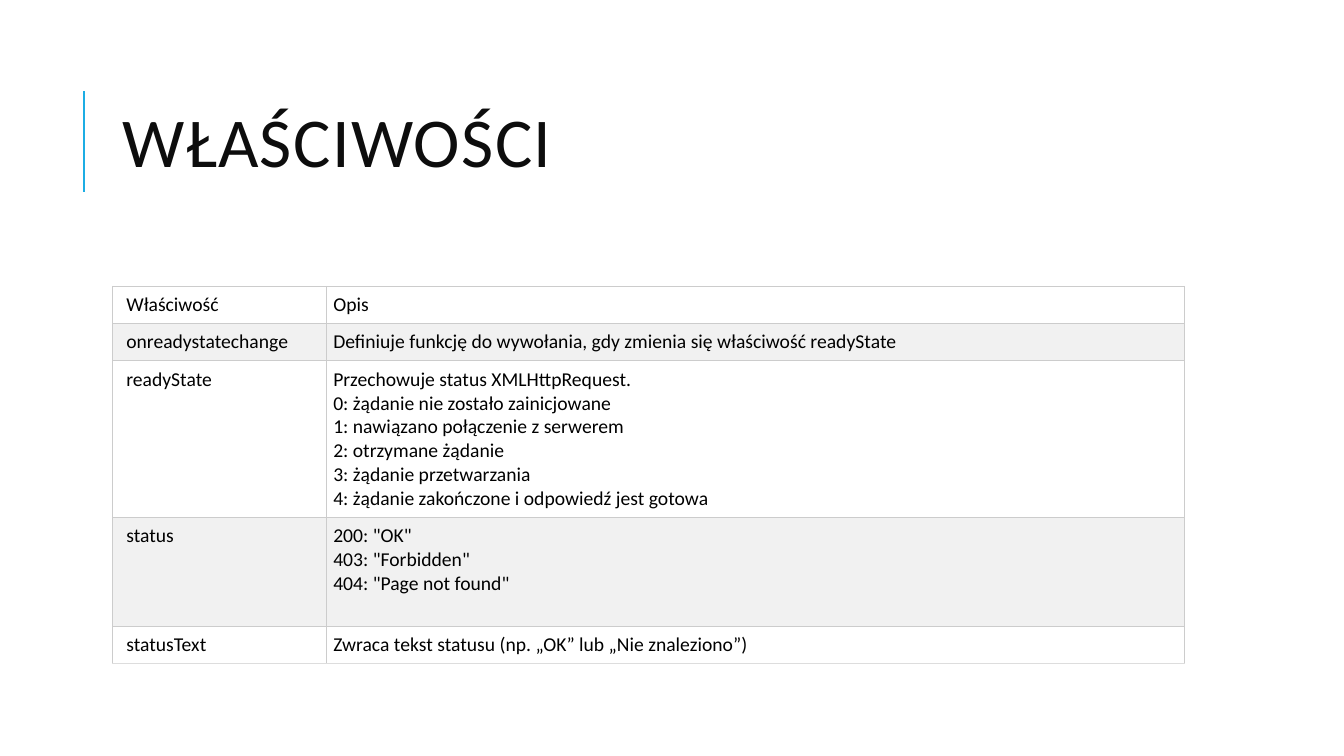
from lxml.etree import SubElement
from pptx import Presentation
from pptx.dml.color import RGBColor
from pptx.enum.shapes import MSO_CONNECTOR as Conn
from pptx.enum.text import MSO_ANCHOR as Anchor, MSO_AUTO_SIZE as Fit, PP_ALIGN as Align
from pptx.oxml.ns import qn
from pptx.util import Pt

BLACK = RGBColor(0x00, 0x00, 0x00)
INK = RGBColor(0x0D, 0x0D, 0x0D)
BLUE = RGBColor(0x1C, 0xAD, 0xE4)
WHITE = RGBColor(0xFF, 0xFF, 0xFF)
BAND = RGBColor(0xF1, 0xF1, 0xF1)
GRID = RGBColor(0xCC, 0xCC, 0xCC)
EDGE = RGBColor(0xDD, 0xDD, 0xDD)

LEFT = 80.64
COLS = [152.64, 612.72]
# Row height, property name, description paragraphs (\v breaks a line)
ROWS = [
    (26.64, "Właściwość", ["Opis"]),
    (26.64, "onreadystatechange",
     ["Definiuje funkcję do wywołania, gdy zmienia się właściwość readyState"]),
    (111.6, "readyState",
     ["Przechowuje status XMLHttpRequest.",
      "0: żądanie nie zostało zainicjowane",
      "1: nawiązano połączenie z serwerem",
      "2: otrzymane żądanie",
      "3: żądanie przetwarzania",
      "4: żądanie zakończone i odpowiedź jest gotowa"]),
    (77.76, "status", ['200: "OK"\v403: "Forbidden"\v404: "Page not found"']),
    (26.64, "statusText", ["Zwraca tekst statusu (np. „OK” lub „Nie znaleziono”)"]),
]


def write(frame, lines, size=14, color=BLACK, font="Calibri", space=1.0, track=0):
    """Fill a text frame, one paragraph per line; track is letter spacing in points."""
    frame.word_wrap = True
    for i, line in enumerate(lines):
        para = frame.add_paragraph() if i else frame.paragraphs[0]
        para.text = line
        para.alignment = Align.LEFT
        para.line_spacing = space
        for run in para.runs:
            run.font.name = font
            run.font.size = Pt(size)
            run.font.bold = False
            run.font.color.rgb = color
            if track:
                run.font._element.set("spc", str(track * 100))
        for gap in para._p.findall(qn("a:br")):
            SubElement(gap, qn("a:rPr")).set("sz", str(size * 100))


def border(cell, low):
    """Draw all four cell borders, the bottom one in the colour low."""
    props = cell._tc.get_or_add_tcPr()
    sides = [("L", GRID), ("R", GRID), ("T", GRID), ("B", low)]
    for i, (side, color) in enumerate(sides):
        line = SubElement(props, qn("a:ln" + side), w=str(Pt(0.75)))
        fill = SubElement(line, qn("a:solidFill"))
        SubElement(fill, qn("a:srgbClr"), val=str(color))
        props.insert(i, line)


class Page:
    def __init__(self, deck):
        self.slide = deck.slides.add_slide(deck.slide_layouts[5])
        self.shapes = self.slide.shapes

    def rule(self, x, top, end, color, width):
        line = self.shapes.add_connector(Conn.STRAIGHT, Pt(x), Pt(end), Pt(x), Pt(top))
        line.line.color.rgb = color
        line.line.width = Pt(width)
        SubElement(line._element.spPr, qn("a:effectLst"))

    def title(self, text, left, top, width, height):
        box = self.shapes.title
        box.left, box.top, box.width, box.height = map(Pt, (left, top, width, height))
        frame = box.text_frame
        frame.auto_size = Fit.NONE
        frame.vertical_anchor = Anchor.MIDDLE
        write(frame, [text], size=50, color=INK, space=0.8, track=1)

    def table(self, rows, cols, left, top):
        high = sum(row[0] for row in rows)
        grid = self.shapes.add_table(len(rows), len(cols), Pt(left), Pt(top),
                                     Pt(sum(cols)), Pt(high)).table
        grid.first_row = grid.horz_banding = False
        for col, width in zip(grid.columns, cols):
            col.width = Pt(width)
        for r, (height, name, about) in enumerate(rows):
            grid.rows[r].height = Pt(height)
            for c, lines in enumerate(([name], about)):
                cell = grid.cell(r, c)
                cell.margin_left = Pt(4.8 if c else 9.6)
                cell.margin_right = cell.margin_top = cell.margin_bottom = Pt(4.8)
                cell.vertical_anchor = Anchor.TOP
                cell.fill.solid()
                cell.fill.fore_color.rgb = BAND if r % 2 else WHITE
                border(cell, EDGE if r == len(rows) - 1 else GRID)
                write(cell.text_frame, lines)


def main():
    deck = Presentation()
    deck.slide_width, deck.slide_height = Pt(960), Pt(540)
    page = Page(deck)
    page.rule(59.76, 64.8, 136.8, BLUE, 1.5)
    page.title("WŁAŚCIWOŚCI", LEFT, 46.08, sum(COLS), 118.08)
    page.table(ROWS, COLS, LEFT, 204.48)
    deck.save("out.pptx")


if __name__ == "__main__":
    main()
